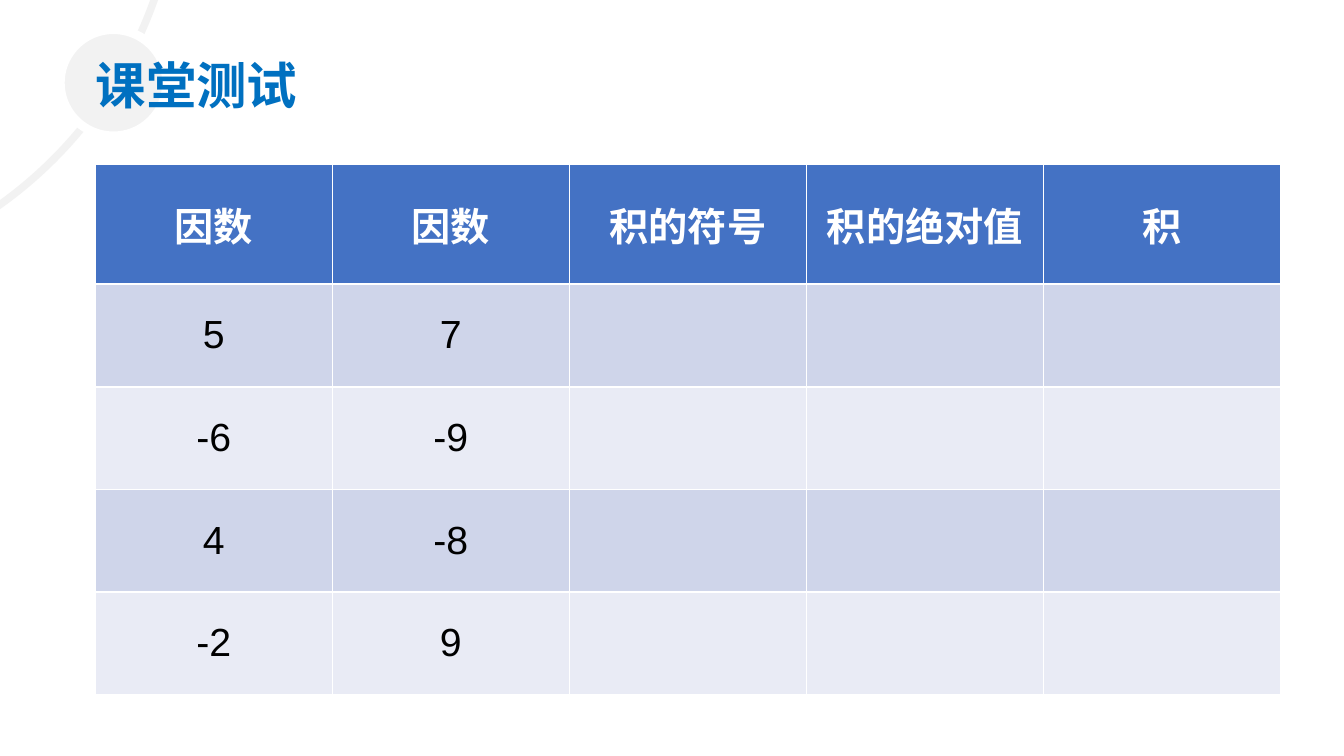
"""Build the classroom quiz slide with a multiplication table to complete."""
import pptx
import pptx.dml.color
import pptx.enum.shapes
import pptx.enum.text
import pptx.util
from pptx.util import Cm


def color(value):
    return pptx.dml.color.RGBColor.from_string(value)


def write_text(text_frame, text, size, ink, bold=False, align=pptx.enum.text.PP_ALIGN.CENTER):
    paragraph = text_frame.paragraphs[0]
    paragraph.alignment = align
    run = paragraph.add_run()
    run.text = text
    run.font.name = "Arial"
    run.font.size = pptx.util.Pt(size)
    run.font.bold = bold
    run.font.color.rgb = color(ink)


presentation = pptx.Presentation()
presentation.slide_width = Cm(25.4)
presentation.slide_height = Cm(14.29)
slide = presentation.slides.add_slide(presentation.slide_layouts[5])

circles = [
    (-12.8, -10.8, 16.18, None, "F2F2F2", 4),
    (1.14, 0.56, 2.01, "F2F2F2", "FFFFFF", 4.75),
]
for left, top, diameter, fill, line, width in circles:
    shape = slide.shapes.add_shape(
        pptx.enum.shapes.MSO_SHAPE.OVAL, Cm(left), Cm(top), Cm(diameter), Cm(diameter))
    shape.shadow.inherit = False
    if fill:
        shape.fill.solid()
        shape.fill.fore_color.rgb = color(fill)
    else:
        shape.fill.background()
    shape.line.color.rgb = color(line)
    shape.line.width = pptx.util.Pt(width)

rows = [
    ["因数", "因数", "积的符号", "积的绝对值", "积"],
    ["5", "7", "", "", ""],
    ["-6", "-9", "", "", ""],
    ["4", "-8", "", "", ""],
    ["-2", "9", "", "", ""],
]
row_fills = ["4472C4", "CFD5EA", "E9EBF5", "CFD5EA", "E9EBF5"]
table = slide.shapes.add_table(
    len(rows), len(rows[0]), Cm(1.8), Cm(3.1), Cm(22.4), Cm(10.03)).table
for column in table.columns:
    column.width = Cm(4.48)
for row_index, values in enumerate(rows):
    header = row_index == 0
    table.rows[row_index].height = Cm(2.27 if header else 1.94)
    for column_index, value in enumerate(values):
        cell = table.cell(row_index, column_index)
        cell.fill.solid()
        cell.fill.fore_color.rgb = color(row_fills[row_index])
        cell.vertical_anchor = pptx.enum.text.MSO_ANCHOR.MIDDLE
        if value:
            write_text(cell.text_frame, value, size=21,
                       ink="FFFFFF" if header else "000000", bold=header)

title = slide.shapes.title
title.left, title.top, title.width, title.height = Cm(1.63), Cm(0.91), Cm(7.24), Cm(1.35)
frame = title.text_frame
frame.word_wrap = True
frame.auto_size = pptx.enum.text.MSO_AUTO_SIZE.NONE
frame.vertical_anchor = pptx.enum.text.MSO_ANCHOR.MIDDLE
frame.margin_left = frame.margin_right = Cm(0.18)
frame.margin_top = frame.margin_bottom = Cm(0.1)
write_text(frame, "课堂测试", size=27, ink="0070C0", bold=True,
           align=pptx.enum.text.PP_ALIGN.LEFT)
title.element.getparent().append(title.element)

presentation.save("out.pptx")
